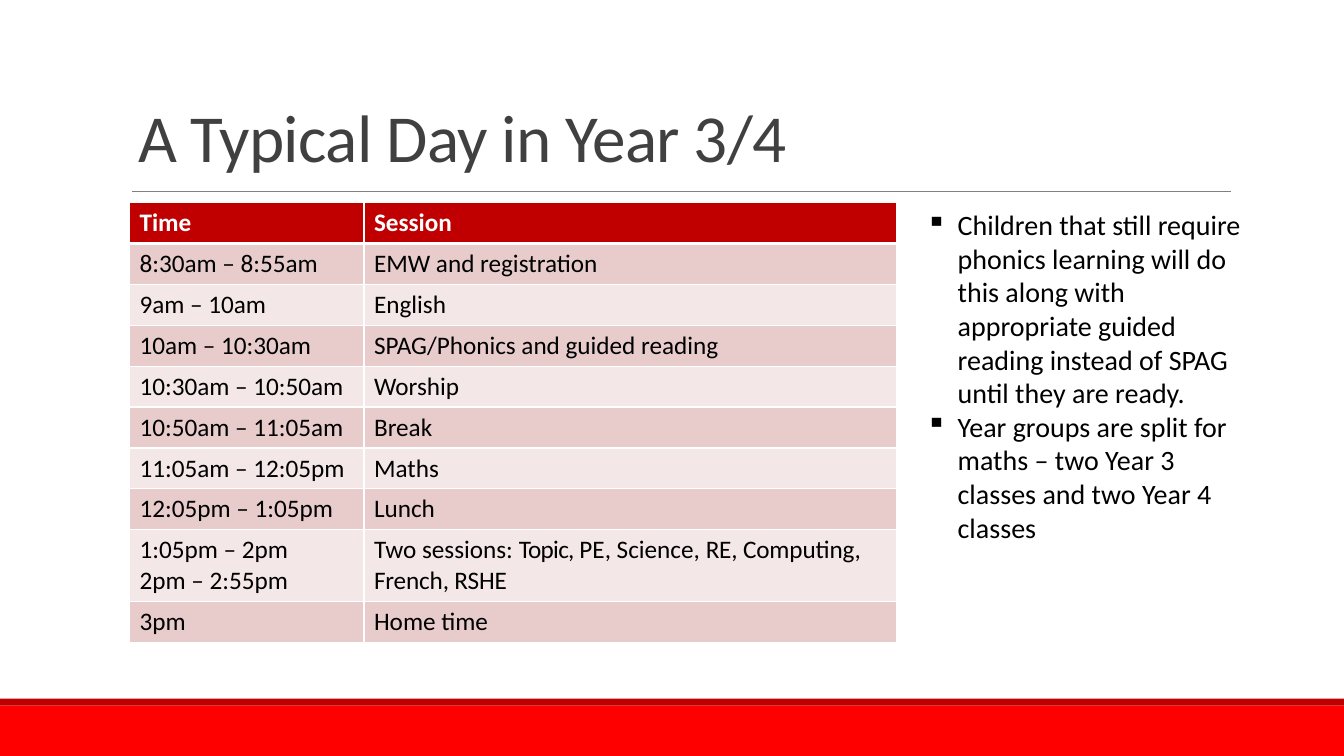
"""Build the slide showing a typical school day in Year 3/4."""
from lxml import etree
from pptx import Presentation
from pptx import util as u
from pptx.dml.color import RGBColor
from pptx.enum import shapes, text
from pptx.oxml import ns

COLORS = {
    "red": "FF0000", "dark red": "C00000", "grey": "808080", "title": "404040",
    "black": "000000", "white": "FFFFFF", "odd row": "E8CCCC", "even row": "F4E7E7",
}
SCHEDULE = [
    (["Time"], [("Session", 0)]),
    (["8:30am – 8:55am"], [("EMW and registration", 0)]),
    (["9am – 10am"], [("English", 0)]),
    (["10am – 10:30am"], [("SPAG/Phonics and guided reading", 0)]),
    (["10:30am – 10:50am"], [("Worship", 0)]),
    (["10:50am – 11:05am"], [("Break", 0)]),
    (["11:05am – 12:05pm"], [("Maths", 0)]),
    (["12:05pm – 1:05pm"], [("Lunch", 0)]),
    (["1:05pm – 2pm", "2pm – 2:55pm"],
     [("Two sessions: ", 0), ("Topic, ", -0.5), ("PE, Science, ", 0),
      ("RE, Computing, French, RSHE", -0.1)]),
    (["3pm"], [("Home time", 0)]),
]
NOTES = [
    "Children that still require phonics learning will do this along with "
    "appropriate guided reading instead of SPAG until they are ready.",
    "Year groups are split for maths – two Year 3 classes and two Year 4 classes",
]


def add_span(para, words, size, color, bold=False, spacing=0):
    span = para.add_run()
    span.text = words
    span.font.name = "Calibri"
    span.font.size = u.Pt(size)
    span.font.bold = bold
    span.font.color.rgb = RGBColor.from_string(COLORS[color])
    if spacing:
        span.font._element.set("spc", str(round(spacing * 100)))


def add_border(cell, side, width):
    line = etree.SubElement(cell._tc.get_or_add_tcPr(), ns.qn(f"a:{side}"), w=str(u.Pt(width)))
    fill = etree.SubElement(line, ns.qn("a:solidFill"))
    etree.SubElement(fill, ns.qn("a:srgbClr"), val=COLORS["white"])


deck = Presentation()
deck.slide_width, deck.slide_height = u.Pt(960), u.Pt(540)
page = deck.slides.add_slide(deck.slide_layouts[6])

for top, height, color in [(504, 36, "red"), (499, 5, "dark red")]:
    band = page.shapes.add_shape(
        shapes.MSO_SHAPE.RECTANGLE, u.Pt(0), u.Pt(top), u.Pt(960), u.Pt(height))
    band.shadow.inherit = False
    band.fill.solid()
    band.fill.fore_color.rgb = RGBColor.from_string(COLORS[color])
    band.line.fill.background()

rule = page.shapes.add_connector(
    shapes.MSO_CONNECTOR.STRAIGHT, u.Pt(94.3), u.Pt(136.8), u.Pt(879), u.Pt(136.8))
rule.line.color.rgb = RGBColor.from_string(COLORS["grey"])
rule.line.width = u.Pt(0.5)
etree.SubElement(rule._element.spPr, ns.qn("a:effectLst"))

title = page.shapes.add_textbox(u.Pt(91.5), u.Pt(26), u.Pt(677), u.Pt(103.7)).text_frame
title.word_wrap = True
title.vertical_anchor = text.MSO_ANCHOR.BOTTOM
title.paragraphs[0].line_spacing = 0.85
add_span(title.paragraphs[0], "A Typical Day in Year 3/4", 48, "title", spacing=-0.5)

row_height = 29.2
table = page.shapes.add_table(
    len(SCHEDULE), 2, u.Pt(92.5), u.Pt(144.8), u.Pt(547.7),
    u.Pt(row_height * len(SCHEDULE))).table
table.columns[0].width, table.columns[1].width = u.Pt(167.5), u.Pt(380.2)
for index, (times, sessions) in enumerate(SCHEDULE):
    header = index == 0
    table.rows[index].height = u.Pt(row_height if len(times) == 1 else 51.2)
    row_color = "dark red" if header else "odd row" if index % 2 else "even row"
    lines_by_cell = [[[(time, 0)] for time in times], [sessions]]
    for cell, lines in zip(table.rows[index].cells, lines_by_cell):
        for side in ("lnL", "lnR", "lnT", "lnB"):
            thick = (header and side == "lnB") or (index == 1 and side == "lnT")
            add_border(cell, side, 3 if thick else 1)
        cell.fill.solid()
        cell.fill.fore_color.rgb = RGBColor.from_string(COLORS[row_color])
        for number, spans in enumerate(lines):
            para = cell.text_frame.add_paragraph() if number else cell.text_frame.paragraphs[0]
            for words, spacing in spans:
                add_span(para, words, 18, "white" if header else "black", header, spacing)

notes = page.shapes.add_textbox(u.Pt(654.5), u.Pt(144.8), u.Pt(247.7), u.Pt(249.8)).text_frame
notes.word_wrap = True
for number, note in enumerate(NOTES):
    para = notes.add_paragraph() if number else notes.paragraphs[0]
    add_span(para, note, 20, "black")
    settings = para._p.get_or_add_pPr()
    settings.set("marL", str(u.Pt(22.5)))
    settings.set("indent", str(u.Pt(-22.5)))
    etree.SubElement(settings, ns.qn("a:buChar"), char="▪")

deck.save("out.pptx")
